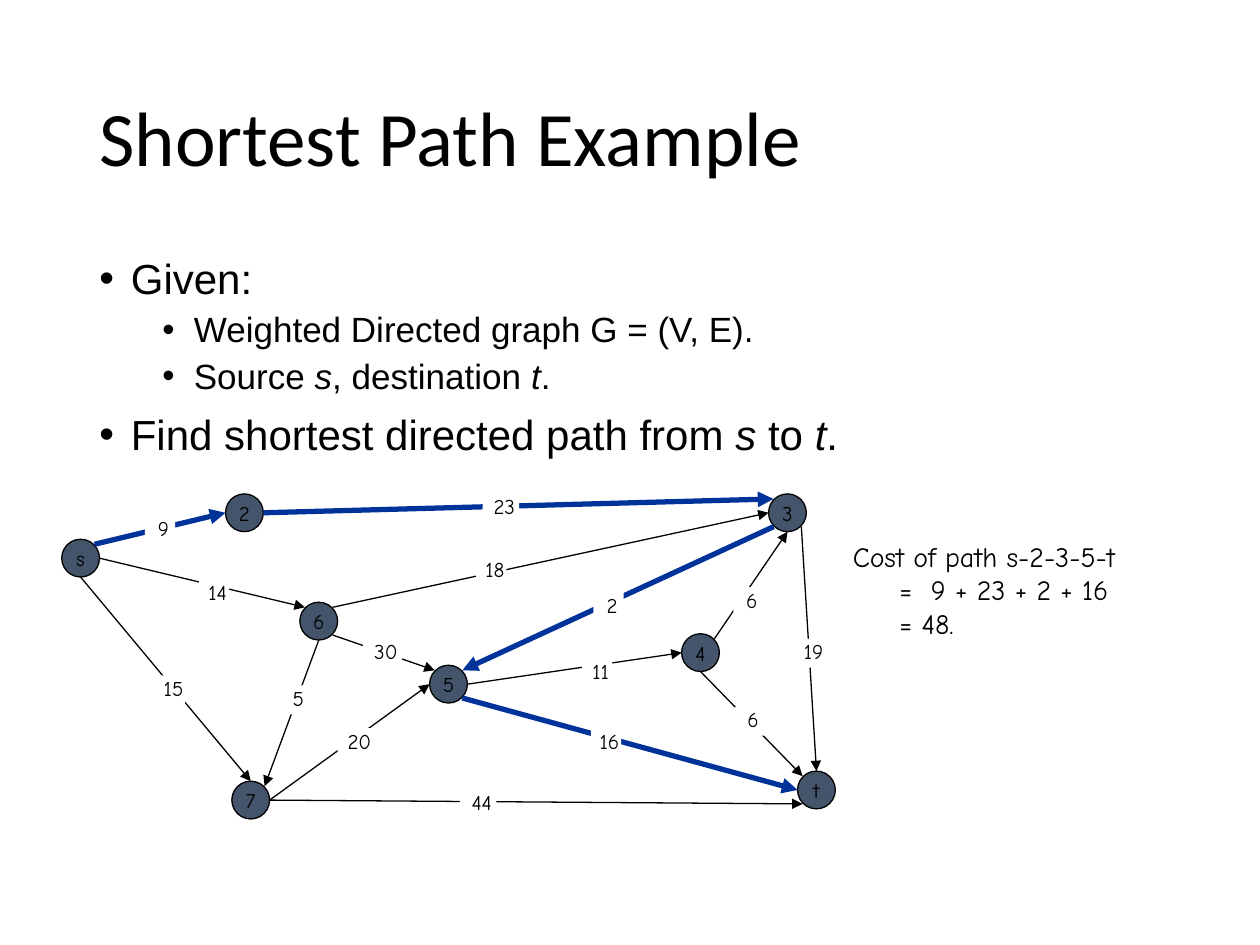
from lxml import etree
from pptx import Presentation
from pptx import util as u
from pptx.dml import color
from pptx.enum import shapes, text
from pptx.oxml import ns

PX = 9144
BLACK, BLUE, SLATE, WHITE = "000000", "003399", "44546A", "FFFFFF"
HAND = "Comic Neue"
SIDE, DIAG, DOT = 15, 11, 30
SITES = {
    "N": (0, -SIDE), "S": (0, SIDE), "W": (-SIDE, 0), "E": (SIDE, 0),
    "NW": (-DIAG, -DIAG), "NE": (DIAG, -DIAG),
    "SW": (-DIAG, DIAG), "SE": (DIAG, DIAG),
}
NODES = {
    "s": (15, 51), "3": (576, 15), "t": (599, 235), "2": (145, 15),
    "6": (204, 101), "7": (150, 243), "4": (507, 126), "5": (307, 151),
}
EDGES = [
    ("s", "NE", "2", "W", 9, (66, 17, 24)),
    ("s", "E", "6", "NW", 14, (109, 68, 24)),
    ("s", "S", "7", "N", 15, (74, 144, 24)),
    ("6", "NE", "3", "W", 18, (329, 50, 24)),
    ("4", "NE", "3", "S", 6, (533, 74, 24)),
    ("6", "SE", "5", "NW", 30, (239, 115, 31)),
    ("5", "SE", "t", "W", 16, (420, 186, 24)),
    ("5", "E", "4", "W", 11, (413, 131, 24)),
    ("4", "S", "t", "NW", 6, (534, 169, 24)),
    ("3", "SW", "5", "NE", 2, (422, 78, 24)),
    ("6", "S", "7", "NE", 5, (173, 152, 24)),
    ("7", "E", "5", "W", 20, (219, 186, 29)),
    ("2", "E", "3", "NW", 23, (334, 0, 29)),
    ("7", "E", "t", "SW", 44, (316, 235, 29)),
    ("3", "SE", "t", "N", 19, (582, 115, 24)),
]
ROUTE = "s235t"


def px(*nums):
    """Turn px lengths into EMU."""
    return [u.Emu(round(n * PX)) for n in nums]


def rgb(code):
    """Turn a hex string into a colour."""
    return color.RGBColor.from_string(code)


def write(para, words, size=12, font=HAND, align="LEFT", space=None,
          lead=None, left=0, hang=0, bullet=None):
    """Fill a paragraph, with words between asterisks in italics."""
    para.alignment = getattr(text.PP_ALIGN, align)
    para.line_spacing = lead
    if space:
        para.space_before = u.Pt(space)
    props = para._p.get_or_add_pPr()
    props.set("marL", str(left * PX))
    props.set("indent", str(-hang * PX))
    if bullet:
        etree.SubElement(props, ns.qn("a:buFont")).set("typeface", "Arial")
        etree.SubElement(props, ns.qn("a:buChar")).set("char", bullet)
    for i, part in enumerate(words.split("*")):
        run = para.add_run()
        run.text = part
        run.font.size = u.Pt(size)
        run.font.name = font
        run.font.italic = i % 2 == 1
        run.font.color.rgb = rgb(BLACK)


def frame(shape, anchor="MIDDLE", wrap=True, inset=(10, 5)):
    """Set the text frame of a shape and return it."""
    area = shape.text_frame
    area.word_wrap = wrap
    area.vertical_anchor = getattr(text.MSO_ANCHOR, anchor)
    area.margin_left = area.margin_right = px(inset[0])[0]
    area.margin_top = area.margin_bottom = px(inset[1])[0]
    return area


def fill(area, rows):
    """Write rows of words and format into a text frame."""
    for i, (words, form) in enumerate(rows):
        para = area.add_paragraph() if i else area.paragraphs[0]
        write(para, words, **form)


def head(slide, box):
    """Place the title."""
    title = slide.shapes.title
    title.left, title.top, title.width, title.height = px(*box)
    write(frame(title).paragraphs[0], "Shortest Path Example",
          size=44, font="Calibri", lead=0.9)


def body(slide, box):
    """Place the bullet list."""
    base = dict(font="Arial", lead=0.9, hang=25, bullet="•")
    main = dict(base, size=24, space=10, left=25)
    sub = dict(base, size=20, space=5, left=75)
    area = frame(slide.shapes.add_textbox(*px(*box)), "TOP")
    fill(area, [
        ("Given:", main),
        ("Weighted Directed graph G = (V, E).", sub),
        ("Source *s*, destination *t*.", sub),
        ("Find shortest directed path from *s* to *t*.", main),
    ])


def cost(slide, box):
    """Place the sum of the path."""
    area = frame(slide.shapes.add_textbox(*px(*box)))
    fill(area, [
        ("Cost of path s-2-3-5-t", dict(size=16)),
        ("=  9 + 23 + 2 + 16", dict(size=16, left=37)),
        ("= 48.", dict(size=16, left=37)),
    ])


def block(slide, kind, box, shade, edge=None):
    """Add a filled shape without shadow."""
    shape = slide.shapes.add_shape(kind, *px(*box))
    shape.shadow.inherit = False
    shape.fill.solid()
    shape.fill.fore_color.rgb = rgb(shade)
    if edge:
        shape.line.color.rgb = rgb(edge)
        shape.line.width = u.Pt(0.75)
    else:
        shape.line.fill.background()
    return shape


def arrow(slide, start, end, bold):
    """Draw an arrow between two points."""
    line = slide.shapes.add_connector(
        shapes.MSO_CONNECTOR.STRAIGHT, *px(*start, *end))
    line.line.color.rgb = rgb(BLUE if bold else BLACK)
    line.line.width = u.Pt(3 if bold else 0.75)
    props = line._element.spPr
    tail = etree.SubElement(props.find(ns.qn("a:ln")), ns.qn("a:tailEnd"))
    tail.set("type", "triangle")
    etree.SubElement(props, ns.qn("a:effectLst"))


def graph(slide, left, top):
    """Draw nodes, edges and weights from a corner."""
    kinds = shapes.MSO_SHAPE
    for name, (x, y) in NODES.items():
        box = (left + x - SIDE, top + y - SIDE, DOT, DOT)
        dot = block(slide, kinds.OVAL, box, SLATE, BLACK)
        write(frame(dot, wrap=False).paragraphs[0], name, align="CENTER")

    def point(name, site):
        """Find a site on the rim of a node."""
        (x, y), (dx, dy) = NODES[name], SITES[site]
        return left + x + dx, top + y + dy

    for a, out, b, into, *_ in EDGES:
        arrow(slide, point(a, out), point(b, into), a + b in ROUTE)
    for *_, weight, (x, y, wide) in EDGES:
        tag = block(slide, kinds.RECTANGLE,
                    (left + x, top + y, wide, 23), WHITE)
        area = frame(tag, "TOP", inset=(0, 0))
        write(area.paragraphs[0], f" {weight}", align="CENTER")


def main():
    """Build and save the slide."""
    deck = Presentation()
    deck.slide_width, deck.slide_height = px(1000, 750)
    slide = deck.slides.add_slide(deck.slide_layouts[5])
    head(slide, (69, 40, 862, 145))
    body(slide, (69, 200, 862, 476))
    cost(slide, (667, 417, 273, 102))
    graph(slide, 49, 392)
    deck.save("out.pptx")


if __name__ == "__main__":
    main()
